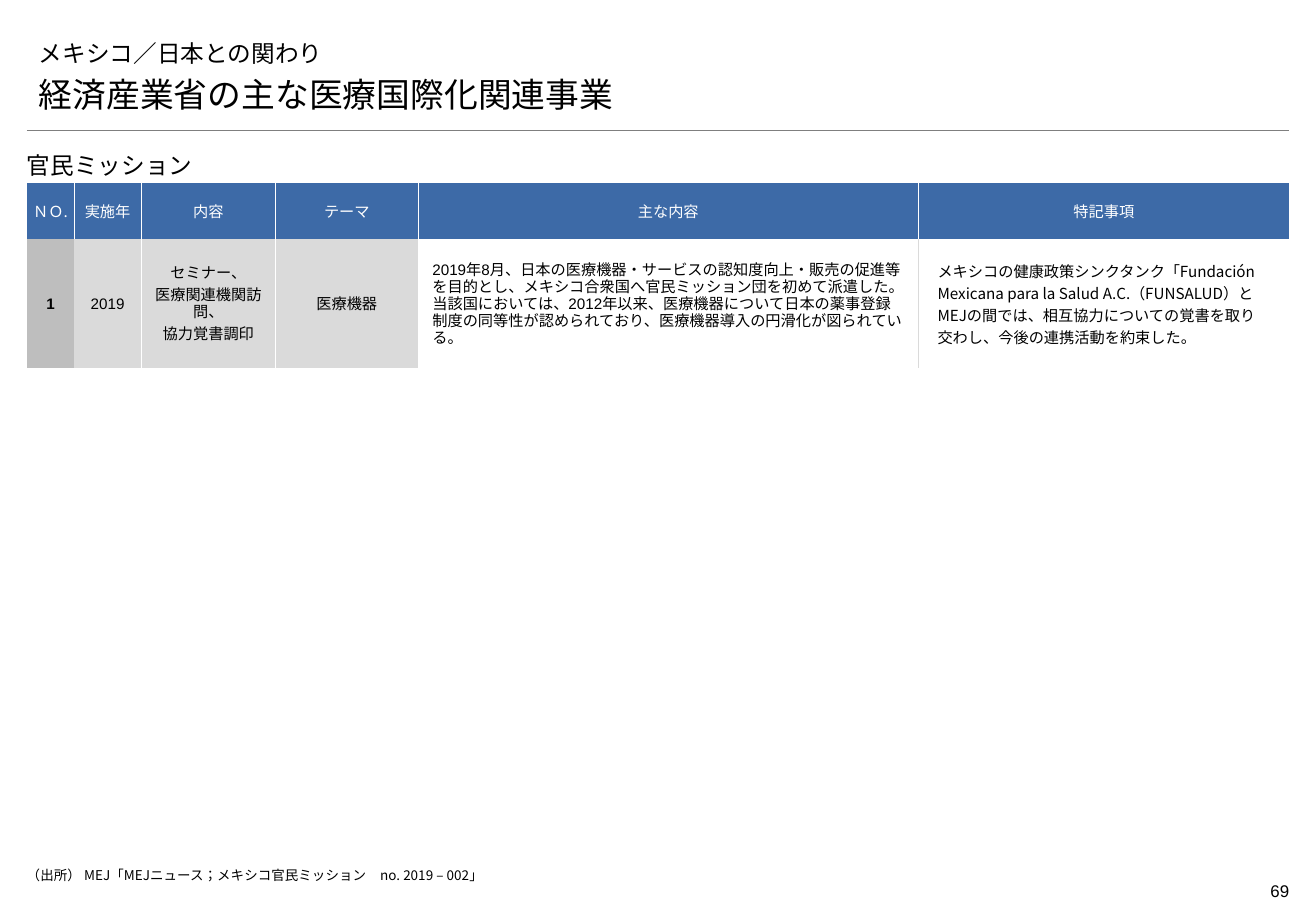
from lxml import etree
from pptx import Presentation
from pptx.dml.color import RGBColor
from pptx.enum.lang import MSO_LANGUAGE_ID
from pptx.enum.shapes import MSO_CONNECTOR
from pptx.enum.text import MSO_ANCHOR, MSO_AUTO_SIZE, PP_ALIGN
from pptx.oxml.ns import qn
from pptx.util import Cm, Pt

LEFT, CENTER, RIGHT = PP_ALIGN.LEFT, PP_ALIGN.CENTER, PP_ALIGN.RIGHT
TOP, MIDDLE, BOTTOM = MSO_ANCHOR.TOP, MSO_ANCHOR.MIDDLE, MSO_ANCHOR.BOTTOM
NO_AUTOFIT = MSO_AUTO_SIZE.NONE
STRAIGHT = MSO_CONNECTOR.STRAIGHT
LANGUAGE = MSO_LANGUAGE_ID.JAPANESE
TITLE_ONLY = 5
HEADING, PLAIN, JAPANESE = "Montserrat", "Arial", "Noto Sans CJK JP"
EAST_ASIAN = {HEADING: JAPANESE, PLAIN: PLAIN, JAPANESE: JAPANESE}
BLACK, WHITE, BLUE = "000000", "FFFFFF", "3D6AA7"
DARK_GREY, LIGHT_GREY, RULE_GREY = "BEBEBE", "DADADA", "7F7F7F"
MARGIN, CONTENT_WIDTH = 0.56, 26.39


def color(value):
    return RGBColor.from_string(value)


class ReportSlide:
    def __init__(self, prs):
        self.slide = prs.slides.add_slide(prs.slide_layouts[TITLE_ONLY])

    def style(self, frame, text, size, font, ink=BLACK, align=LEFT,
              bold=False, before=0, after=0):
        frame.text = text
        for index, paragraph in enumerate(frame.paragraphs):
            paragraph.alignment = align
            paragraph.space_before = Pt(before if index else 0)
            paragraph.space_after = Pt(after)
            paragraph._p.get_or_add_pPr().set("hangingPunct", "0")
            for run in paragraph.runs:
                run.font.size, run.font.bold = Pt(size), bold
                run.font.name = font
                run.font.language_id = LANGUAGE
                run.font.color.rgb = color(ink)
                east_asian = etree.SubElement(run.font._element, qn("a:ea"))
                east_asian.set("typeface", EAST_ASIAN[font])

    def place(self, shape, box, text, size, font, insets=(0.25, 0.13),
              anchor=BOTTOM, align=LEFT):
        shape.left, shape.top, shape.width, shape.height = map(Cm, box)
        frame = shape.text_frame
        frame.word_wrap, frame.auto_size = True, NO_AUTOFIT
        frame.vertical_anchor = anchor
        frame.margin_left = frame.margin_right = Cm(insets[0])
        frame.margin_top = frame.margin_bottom = Cm(insets[1])
        self.style(frame, text, size, font, align=align)
        return frame

    def title(self, box, text, size):
        self.place(self.slide.shapes.title, box, text, size, HEADING)

    def text(self, box, text, size, font, **layout):
        shape = self.slide.shapes.add_textbox(*map(Cm, box))
        return self.place(shape, box, text, size, font, **layout)

    def rule(self, top):
        line = self.slide.shapes.add_connector(
            STRAIGHT, Cm(MARGIN), Cm(top), Cm(MARGIN + CONTENT_WIDTH), Cm(top))
        line.line.color.rgb = color(RULE_GREY)
        line.line.width = Pt(0.25)
        etree.SubElement(line._element.spPr, qn("a:effectLst"))

    def border(self, cell, side, ink):
        edge = etree.SubElement(cell._tc.get_or_add_tcPr(), qn(f"a:ln{side}"))
        if ink:
            edge.set("w", str(Pt(0.5)))
            fill = etree.SubElement(edge, qn("a:solidFill"))
            etree.SubElement(fill, qn("a:srgbClr")).set("val", ink)
        else:
            edge.set("w", "0")
            etree.SubElement(edge, qn("a:noFill"))

    def cell(self, cell, text, fill, insets, edges, **look):
        for side, ink in zip("LRTB", (*edges, None, None)):
            self.border(cell, side, ink)
        cell.fill.solid()
        cell.fill.fore_color.rgb = color(fill)
        cell.vertical_anchor = MIDDLE
        cell.margin_left = cell.margin_right = Cm(insets[0])
        cell.margin_top = cell.margin_bottom = Cm(insets[1])
        self.style(cell.text_frame, text, 9, **look)

    def table(self, top, widths, heights):
        table = self.slide.shapes.add_table(
            len(heights), len(widths), Cm(MARGIN), Cm(top),
            Cm(sum(widths)), Cm(sum(heights))).table
        table.first_row = table.horz_banding = False
        for column, width in zip(table.columns, widths):
            column.width = Cm(width)
        for row, height in zip(table.rows, heights):
            row.height = Cm(height)
        return table


def main():
    prs = Presentation()
    prs.slide_width, prs.slide_height = Cm(27.51), Cm(19.05)
    page = ReportSlide(prs)

    # Heading
    page.rule(2.72)
    page.title((MARGIN, 0.55, CONTENT_WIDTH, 0.99),
               "メキシコ／日本との関わり", 14)
    page.text((MARGIN, 1.52, CONTENT_WIDTH, 0.99),
              "経済産業省の主な医療国際化関連事業", 20, HEADING)
    mission = page.text((MARGIN, 2.95, CONTENT_WIDTH, 0.99),
                        "官民ミッション", 14, HEADING, insets=(0, 0.13))
    mission.margin_bottom = Cm(0.2)

    # Mission table: each column has a heading, then a text with its look
    missions = page.table(3.82, (0.99, 1.4, 2.81, 2.98, 10.46, 7.75),
                          (1.17, 2.7))
    narrow, medium = (0.1, 0.08), (0.2, 0.08)
    centred = {"font": PLAIN, "align": CENTER}
    columns = [
        ("ＮＯ.", "1", DARK_GREY, narrow, {**centred, "bold": True}),
        ("実施年", "2019", LIGHT_GREY, narrow, centred),
        ("内容", "セミナー、\n医療関連機関訪問、\n協力覚書調印",
         LIGHT_GREY, medium, {**centred, "before": 3}),
        ("テーマ", "医療機器", LIGHT_GREY, medium, centred),
        ("主な内容",
         "2019年8月、日本の医療機器・サービスの認知度向上・販売の促進等を目的とし、"
         "メキシコ合衆国へ官民ミッション団を初めて派遣した。当該国においては、"
         "2012年以来、医療機器について日本の薬事登録制度の同等性が認められており、"
         "医療機器導入の円滑化が図られている。",
         WHITE, (0.3, 0.2), {"font": PLAIN, "after": 4}),
        ("特記事項",
         "メキシコの健康政策シンクタンク「Fundación Mexicana para la Salud A.C."
         "（FUNSALUD）とMEJの間では、相互協力についての覚書を取り交わし、"
         "今後の連携活動を約束した。",
         WHITE, (0.4, 0.2), {"font": JAPANESE}),
    ]
    header_edges = [None] + [WHITE] * 5 + [None]
    body_edges = [None, None, WHITE, WHITE, WHITE, LIGHT_GREY, None]
    for i, (heading, text, fill, insets, look) in enumerate(columns):
        page.cell(missions.cell(0, i), heading, BLUE, (0.1, 0.13),
                  header_edges[i:i + 2], font=JAPANESE, ink=WHITE, align=CENTER)
        page.cell(missions.cell(1, i), text, fill, insets,
                  body_edges[i:i + 2], **look)

    # Source and page number
    page.text((MARGIN, 18.14, 25.4, 0.41),
              "（出所） MEJ「MEJニュース；メキシコ官民ミッション　no. 2019 – 002」",
              8, JAPANESE, insets=(0, 0), anchor=TOP)
    page.text((24.95, 18.29, 2, 0.69), "69", 10, PLAIN,
              insets=(0, 0.13), anchor=TOP, align=RIGHT)

    prs.save("out.pptx")


if __name__ == "__main__":
    main()
